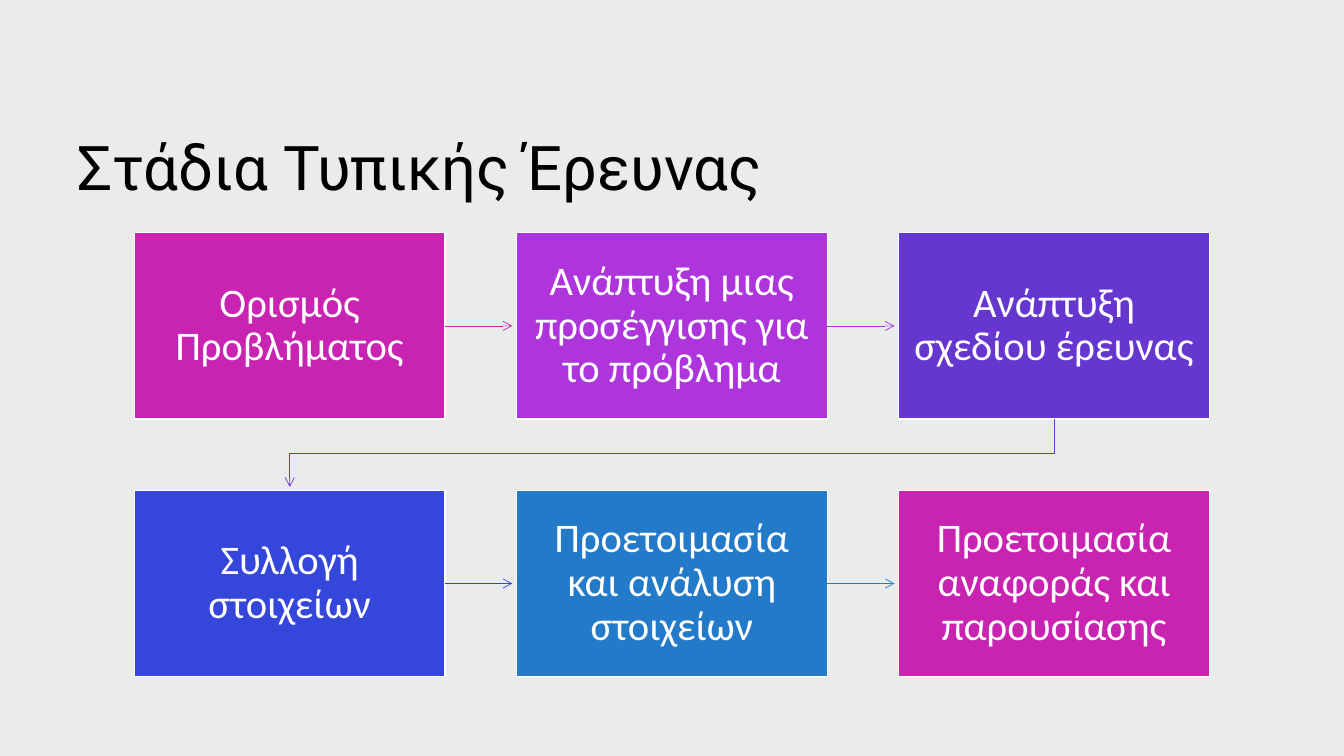
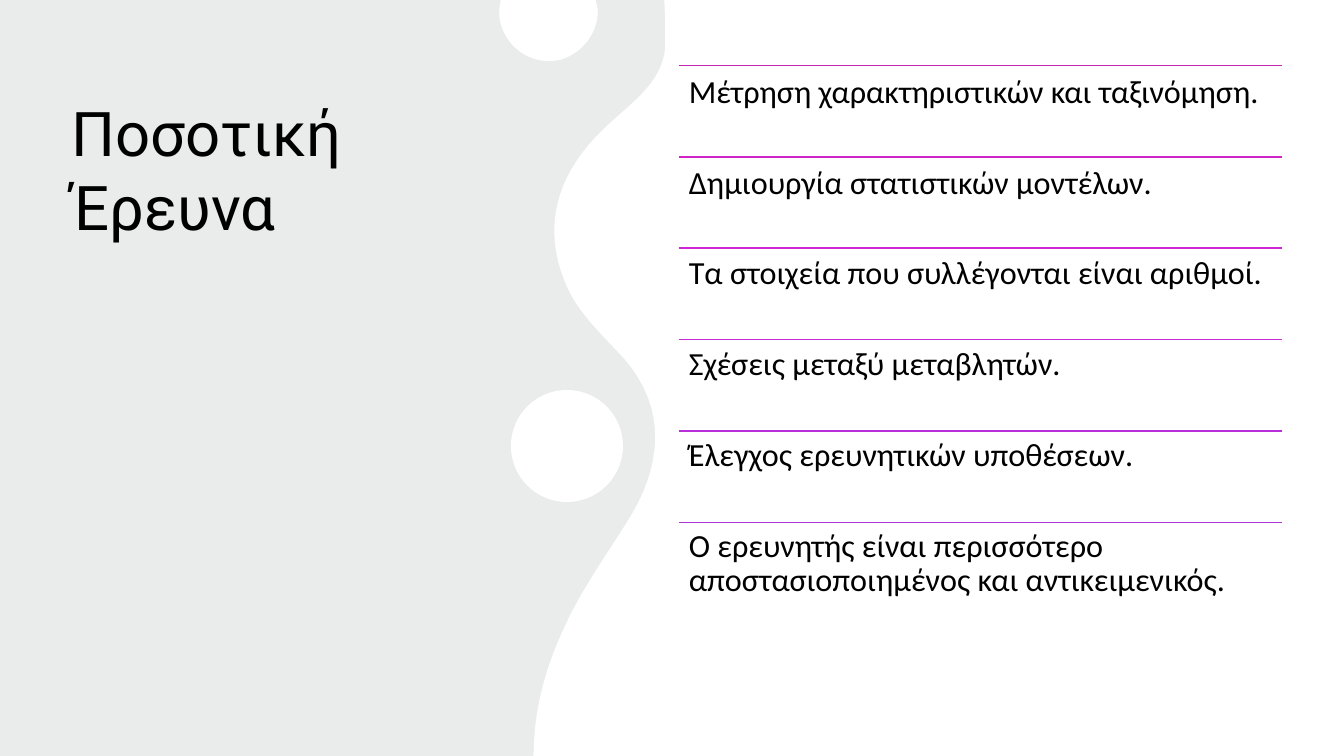
from lxml.etree import SubElement as Sub
from pptx import Presentation
from pptx.dml.color import RGBColor as Rgb
from pptx.enum.shapes import MSO_CONNECTOR as Link, MSO_SHAPE as Form
from pptx.enum.text import MSO_ANCHOR as Anchor, MSO_AUTO_SIZE as Fit, PP_ALIGN as Align
from pptx.oxml.ns import qn
from pptx.util import Pt

WIDE, HIGH = 960, 540
HUES = {
    "ground": "E9ECEB", "white": "FFFFFF", "black": "000000",
    "pink": "C923B2", "purple": "AD35DB", "violet": "6637CE",
    "blue": "3547DB", "azure": "237AC9",
    "rose": "CF24C6", "orchid": "D025D5", "mauve": "C628D9", "plum": "B92FDA",
}
STAGES = [
    ("Ορισμός Προβλήματος", "pink"),
    ("Ανάπτυξη μιας προσέγγισης για το πρόβλημα", "purple"),
    ("Ανάπτυξη σχεδίου έρευνας", "violet"),
    ("Συλλογή στοιχείων", "blue"),
    ("Προετοιμασία και ανάλυση στοιχείων", "azure"),
    ("Προετοιμασία αναφοράς και παρουσίασης", "pink"),
]
TRAITS = [
    ("Μέτρηση χαρακτηριστικών και ταξινόμηση.", "pink"),
    ("Δημιουργία στατιστικών μοντέλων.", "rose"),
    ("Τα στοιχεία που συλλέγονται είναι αριθμοί.", "orchid"),
    ("Σχέσεις μεταξύ μεταβλητών.", "mauve"),
    ("Έλεγχος ερευνητικών υποθέσεων.", "plum"),
    ("Ο ερευνητής είναι περισσότερο αποστασιοποιημένος και αντικειμενικός.", "purple"),
]
WAVE = [
    (381, 540), (381.6, 528.5),
    (383, 501, 391, 473.8, 403.9, 446.4),
    (416.9, 418.3, 436.3, 392.4, 452.2, 365.8),
    (474.5, 326.9, 475.9, 285.1, 439.2, 249.1),
    (426.2, 235.4, 411.8, 221, 404.6, 203.8),
    (385.2, 159.8, 398.9, 118.8, 439.9, 84.2),
    (455.8, 69.8, 473.8, 56.2, 475.2, 33.1),
    (475.2, 14.4), (474.5, 0), (WIDE, 0), (WIDE, HIGH),
]
DROP = [
    (357.8, 0), (425.5, 0), (427, 6.5),
    (427.7, 22.3, 416.9, 37.4, 401, 42.5),
    (382.3, 47.5, 362.9, 36, 357.8, 17.3),
    (356.4, 13, 356.4, 7.9, 357.1, 3.6),
]


def tint(name):
    return Rgb.from_string(HUES[name])


def write(para, text, size=44, font="Calibri", hue="black",
          align=Align.LEFT, lead=1.0, gap=0):
    para.alignment = align
    para.line_spacing = lead
    para.space_before = Pt(gap)
    run = para.add_run()
    run.text = text
    run.font.size = Pt(size)
    run.font.name = font
    run.font.color.rgb = tint(hue)


def trace(steps, parts=16):
    spots = [steps[0]]
    for step in steps[1:]:
        if len(step) == 2:
            spots.append(step)
            continue
        nodes = [spots[-1], step[:2], step[2:4], step[4:]]
        for i in range(1, parts + 1):
            t = i / parts
            rates = ((1 - t) ** 3, 3 * t * (1 - t) ** 2, 3 * t * t * (1 - t), t ** 3)
            spots.append(tuple(sum(r * n[k] for r, n in zip(rates, nodes)) for k in (0, 1)))
    return [(Pt(x), Pt(y)) for x, y in spots]


class Deck:
    def __init__(self):
        self.show = Presentation()
        self.show.slide_width, self.show.slide_height = Pt(WIDE), Pt(HIGH)
        fill = self.show.slide_master.background.fill
        fill.solid()
        fill.fore_color.rgb = tint("ground")
        self.slide = None

    def add(self, layout):
        self.slide = self.show.slides.add_slide(self.show.slide_layouts[layout])

    def place(self, holder, area, anchor, inset=(7.2, 3.6)):
        holder.left, holder.top, holder.width, holder.height = map(Pt, area)
        return self.frame(holder, anchor, inset)

    def frame(self, shape, anchor, inset):
        frame = shape.text_frame
        frame.word_wrap = True
        frame.auto_size = Fit.NONE
        frame.vertical_anchor = anchor
        frame.margin_left = frame.margin_right = Pt(inset[0])
        frame.margin_top = frame.margin_bottom = Pt(inset[1])
        return frame

    def title(self, text, area, anchor):
        frame = self.place(self.slide.shapes.title, area, anchor)
        write(frame.paragraphs[0], text, font="Roboto")

    def list(self, lines, area, gap):
        frame = self.place(self.slide.placeholders[1], area, Anchor.TOP, (7.2, 7.2))
        for i, line in enumerate(lines):
            para = frame.add_paragraph() if i else frame.paragraphs[0]
            props = para._p.get_or_add_pPr()
            props.set("marL", "0")
            props.set("indent", "0")
            Sub(props, qn("a:buNone"))
            write(para, line, size=23, lead=0.9, gap=gap if i else 0)

    def paint(self, shape, hue, edge=None):
        shape.shadow.inherit = False
        shape.fill.solid()
        shape.fill.fore_color.rgb = tint(hue)
        if edge:
            shape.line.color.rgb = tint(edge)
            shape.line.width = Pt(1)
        else:
            shape.line.fill.background()
        return shape

    def box(self, text, hue, area):
        shape = self.slide.shapes.add_shape(Form.RECTANGLE, *map(Pt, area))
        self.paint(shape, hue, "white")
        frame = self.frame(shape, Anchor.MIDDLE, (11, 11.5))
        write(frame.paragraphs[0], text, size=29, hue="white", align=Align.CENTER, lead=0.9)

    def back(self, shape):
        self.paint(shape, "white")
        shape.element.getparent().insert(2, shape.element)

    def oval(self, area):
        self.back(self.slide.shapes.add_shape(Form.OVAL, *map(Pt, area)))

    def curve(self, steps):
        spots = trace(steps)
        pen = self.slide.shapes.build_freeform(*spots[0])
        pen.add_line_segments(spots[1:], close=True)
        self.back(pen.convert_to_shape())

    def line(self, ends, hue, width=1.0, arrow=False, kind=Link.STRAIGHT):
        line = self.slide.shapes.add_connector(kind, *map(Pt, ends))
        line.line.color.rgb = tint(hue)
        line.line.width = Pt(width)
        props = line.element.spPr
        if arrow:
            Sub(props.find(qn("a:ln")), qn("a:tailEnd"), type="arrow")
        Sub(props, qn("a:effectLst"))
        return line

    def elbow(self, x, y, end_x, end_y, hue):
        mid_x, mid_y = (x + end_x) / 2, (y + end_y) / 2
        half_w, half_h = (end_y - y) / 2, (x - end_x) / 2
        ends = mid_x - half_w, mid_y - half_h, mid_x + half_w, mid_y + half_h
        line = self.line(ends, hue, 0.5, True, Link.ELBOW)
        line.element.spPr.find(qn("a:xfrm")).set("rot", "5400000")


def stages(deck):
    deck.add(5)
    deck.title("Στάδια Τυπικής Έρευνας", (48, 44, 864, 104.4), Anchor.BOTTOM)
    left, top, wide, high = 96, 166.3, 222, 133
    step_x, step_y, cols = 273, 184, 3
    for i, (text, hue) in enumerate(STAGES):
        row, col = divmod(i, cols)
        x, y = left + col * step_x, top + row * step_y
        deck.box(text, hue, (x, y, wide, high))
        if col < cols - 1:
            mid = y + high / 2
            deck.line((x + wide, mid, x + step_x - 3, mid), hue, 0.5, True)
        elif i < len(STAGES) - 1:
            deck.elbow(x + wide / 2, y + high, left + wide / 2, y + step_y - 2.5, hue)


def traits(deck):
    deck.add(1)
    deck.title("Ποσοτική Έρευνα", (44, 64, 291.6, 426), Anchor.TOP)
    deck.curve(WAVE)
    deck.curve(DROP)
    deck.oval((365, 278.6, 80, 80))
    left, top, wide, step = 484.8, 46.8, 431, 65.25
    for i, (text, hue) in enumerate(TRAITS):
        y = top + i * step
        deck.line((left, y, left + wide, y), hue)
    deck.list([text for text, hue in TRAITS], (left, top, wide, step * len(TRAITS)), 40)


def main():
    deck = Deck()
    stages(deck)
    traits(deck)
    deck.show.save("out.pptx")


if __name__ == "__main__":
    main()
